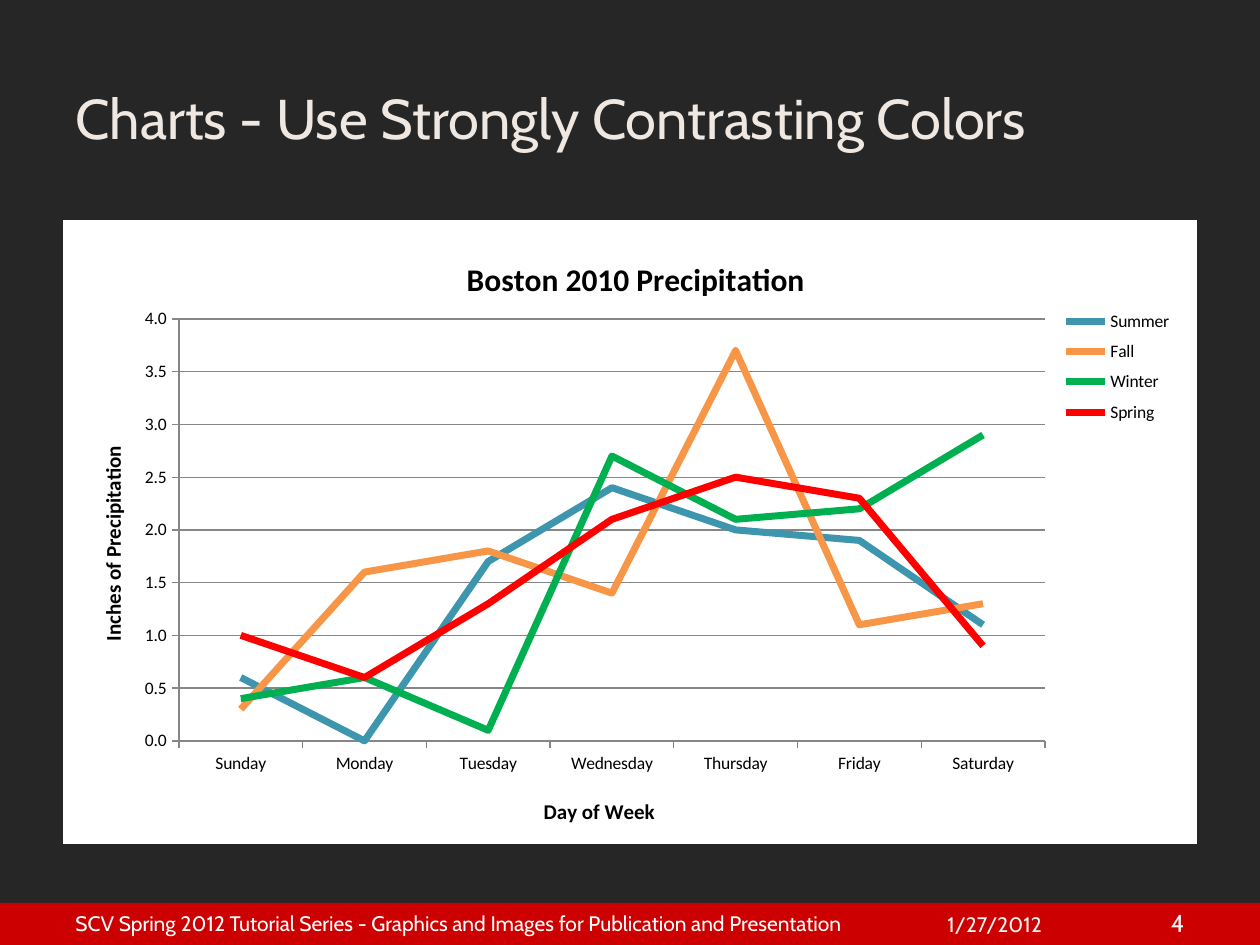
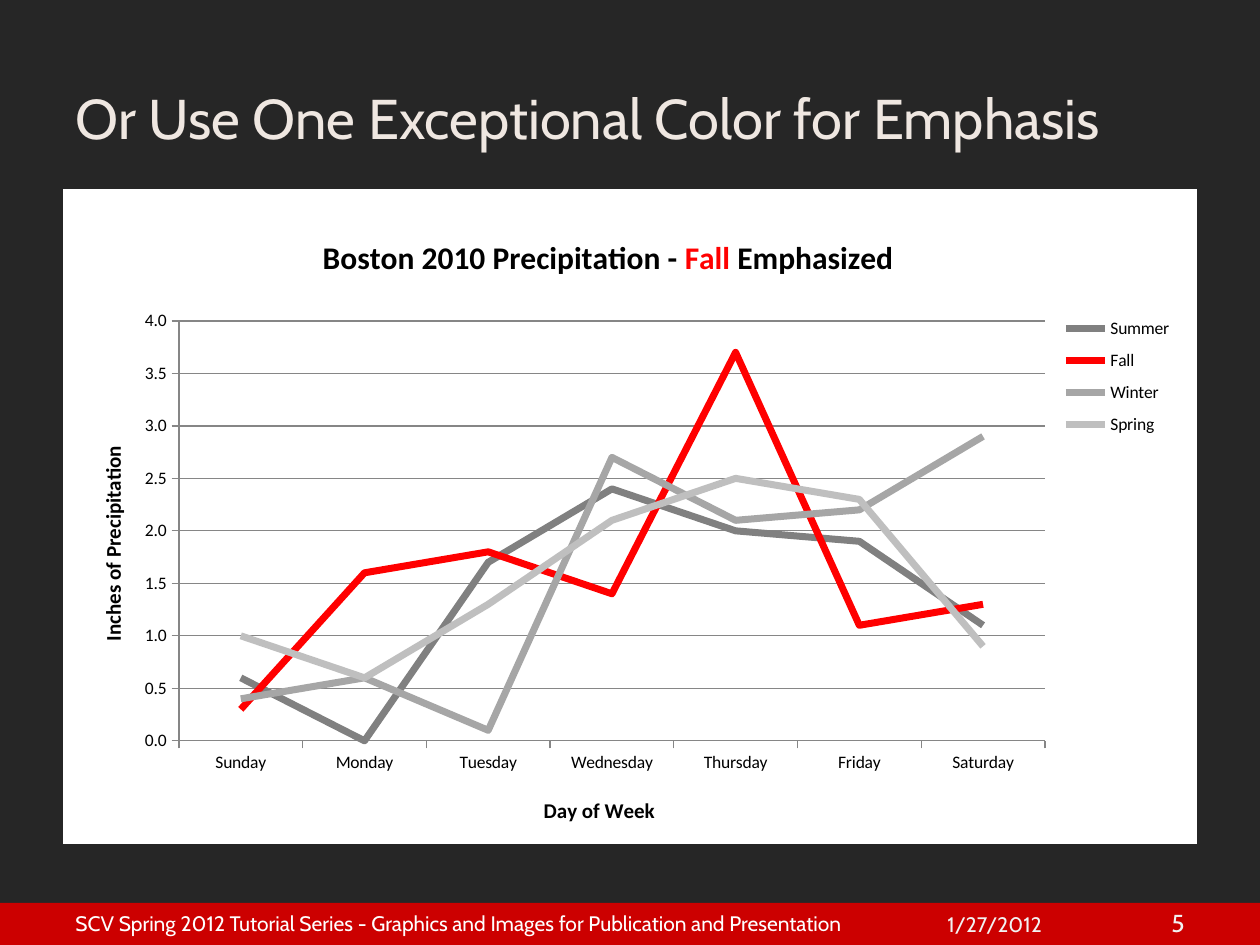
from lxml.etree import SubElement
from pptx import Presentation
from pptx.chart.data import CategoryChartData
from pptx.dml.color import RGBColor
from pptx.enum.chart import XL_CHART_TYPE, XL_LEGEND_POSITION, XL_MARKER_STYLE, XL_TICK_MARK
from pptx.enum.shapes import MSO_SHAPE
from pptx.enum.text import MSO_ANCHOR, PP_ALIGN
from pptx.oxml import parse_xml
from pptx.oxml.ns import nsdecls, qn
from pptx.util import Pt

EMU_PER_PX = 914400 / 126
SLIDE_WIDTH, SLIDE_HEIGHT = 1260, 945
BAND_TOP = 903
CHART_LEFT, CHART_WIDTH, CHART_BOTTOM = 63, 1134, 844

COLORS = {
    "background": "262626",
    "band": "CC0000",
    "title": "EFE7E1",
    "footer": "FFFFFF",
    "footer_detail": "F2F2F2",
    "panel": "FFFFFF",
    "text": "000000",
    "grid": "868686",
    "blue": "3D96AE",
    "orange": "F79646",
    "green": "00B050",
    "red": "FF0000",
    "dark_gray": "808080",
    "mid_gray": "A6A6A6",
    "light_gray": "BFBFBF",
}
SLIDE_FONT = "Cabin"
CHART_FONT = "Calibri"

FOOTER = "SCV Spring 2012 Tutorial Series - Graphics and Images for Publication and Presentation"
DATE = "1/27/2012"

DAYS = ["Sunday", "Monday", "Tuesday", "Wednesday", "Thursday", "Friday", "Saturday"]
PRECIPITATION = {
    "Summer": [0.6, 0, 1.7, 2.4, 2, 1.9, 1.1],
    "Fall": [0.3, 1.6, 1.8, 1.4, 3.7, 1.1, 1.3],
    "Winter": [0.4, 0.6, 0.1, 2.7, 2.1, 2.2, 2.9],
    "Spring": [1, 0.6, 1.3, 2.1, 2.5, 2.3, 0.9],
}

SLIDES = [
    {
        "title": "Charts - Use Strongly Contrasting Colors",
        "number": "4",
        "top": 220,
        "chart_title": [("Boston 2010 Precipitation", "text")],
        "chart_title_at": (461, 252),
        "plot_at": (179, 319, 866, 422),
        "legend_at": (1055, 301, 125, 132),
        "line_colors": ["blue", "orange", "green", "red"],
    },
    {
        "title": "Or Use One Exceptional Color for Emphasis",
        "number": "5",
        "top": 189,
        "chart_title": [
            ("Boston 2010 Precipitation - ", "text"),
            ("Fall", "red"),
            (" Emphasized", "text"),
        ],
        "chart_title_at": (319, 233),
        "plot_at": (179, 321, 866, 420),
        "legend_at": (1055, 307, 125, 139),
        "line_colors": ["dark_gray", "red", "mid_gray", "light_gray"],
    },
]


def px(length):
    return round(length * EMU_PER_PX)


def rgb(name):
    return RGBColor.from_string(COLORS[name])


def add_text(paragraph, text, size=12, color="text", font=SLIDE_FONT, bold=False):
    run = paragraph.add_run()
    run.text = text
    run.font.size = Pt(size)
    run.font.name = font
    run.font.bold = bold
    run.font.color.rgb = rgb(color)


def add_text_box(slide, box, text, align=PP_ALIGN.LEFT, **text_format):
    shape = slide.shapes.add_textbox(*map(px, box))
    text_frame = shape.text_frame
    text_frame.word_wrap = True
    text_frame.vertical_anchor = MSO_ANCHOR.MIDDLE
    paragraph = text_frame.paragraphs[0]
    paragraph.alignment = align
    add_text(paragraph, text, **text_format)


def add_band(slide):
    shape = slide.shapes.add_shape(
        MSO_SHAPE.RECTANGLE, 0, px(BAND_TOP), px(SLIDE_WIDTH), px(SLIDE_HEIGHT - BAND_TOP)
    )
    shape.shadow.inherit = False
    shape.fill.solid()
    shape.fill.fore_color.rgb = rgb("band")
    shape.line.fill.background()


def add_frame(slide, title, number):
    slide.background.fill.solid()
    slide.background.fill.fore_color.rgb = rgb("background")
    add_band(slide)
    add_text_box(slide, (63, 38, 1134, 158), title, size=32, color="title")
    add_text_box(slide, (935, 903, 136, 42), DATE, color="footer_detail")
    add_text_box(slide, (1102, 901, 95, 44), number, align=PP_ALIGN.RIGHT,
                 size=14, color="footer_detail")
    add_text_box(slide, (63, 901, 840, 44), FOOTER, color="footer")


def place(element, position, chart_top, index=1):
    for layout in element.findall(qn("c:layout")):
        element.remove(layout)
    layout = parse_xml(f"<c:layout {nsdecls('c')}/>")
    element.insert(index, layout)
    manual = SubElement(layout, qn("c:manualLayout"))
    if index == 0:
        SubElement(manual, qn("c:layoutTarget"), val="inner")
    for name in ("xMode", "yMode"):
        SubElement(manual, qn(f"c:{name}"), val="edge")
    left, top, *size = position
    height = CHART_BOTTOM - chart_top
    fractions = [(left - CHART_LEFT) / CHART_WIDTH, (top - chart_top) / height]
    if size:
        fractions += [size[0] / CHART_WIDTH, size[1] / height]
    for name, fraction in zip("xywh", fractions):
        SubElement(manual, qn(f"c:{name}"), val=f"{fraction:.4f}")


def fill_panel(chart):
    panel = parse_xml(
        f"<c:spPr {nsdecls('c', 'a')}><a:solidFill><a:srgbClr val=\"{COLORS['panel']}\"/>"
        "</a:solidFill><a:ln><a:noFill/></a:ln></c:spPr>"
    )
    chart.element.find(qn("c:chart")).addnext(panel)


def style_line(line, color, width):
    line.color.rgb = rgb(color)
    line.width = Pt(width)


def style_axis(axis, title, position, chart_top):
    axis.major_tick_mark = XL_TICK_MARK.OUTSIDE
    axis.minor_tick_mark = XL_TICK_MARK.NONE
    style_line(axis.format.line, "grid", 0.75)
    text_frame = axis.axis_title.text_frame
    add_text(text_frame.paragraphs[0], title, font=CHART_FONT, bold=True)
    place(axis.axis_title.element if hasattr(axis.axis_title, "element")
          else axis.axis_title._element, position, chart_top)


def style_value_axis(axis, chart_top):
    axis.minimum_scale, axis.maximum_scale, axis.major_unit = 0, 4, 0.5
    axis.tick_labels.number_format = "#,##0.0"
    axis.tick_labels.number_format_is_linked = False
    axis.has_major_gridlines = True
    style_line(axis.major_gridlines.format.line, "grid", 0.75)
    style_axis(axis, "Inches of Precipitation", (95, 442), chart_top)
    body = axis.axis_title.text_frame._txBody.find(qn("a:bodyPr"))
    body.set("rot", "-5400000")
    body.set("vert", "horz")


def add_line_chart(slide, top, title, title_at, plot_at, legend_at, line_colors):
    data = CategoryChartData(number_format="0.0")
    data.categories = DAYS
    for season, inches in PRECIPITATION.items():
        data.add_series(season, inches)
    box = (CHART_LEFT, top, CHART_WIDTH, CHART_BOTTOM - top)
    chart = slide.shapes.add_chart(XL_CHART_TYPE.LINE, *map(px, box), data).chart
    chart.font.name = CHART_FONT
    chart.font.size = Pt(10)
    chart.font.color.rgb = rgb("text")
    fill_panel(chart)

    chart.has_title = True
    paragraph = chart.chart_title.text_frame.paragraphs[0]
    for text, color in title:
        add_text(paragraph, text, size=18, color=color, font=CHART_FONT, bold=True)
    chart.has_legend = True
    chart.legend.position = XL_LEGEND_POSITION.RIGHT
    chart.legend.include_in_layout = False

    style_axis(chart.category_axis, "Day of Week", (540, 793), top)
    style_value_axis(chart.value_axis, top)
    contents = chart.element.find(qn("c:chart"))
    place(contents.find(qn("c:title")), title_at, top)
    place(contents.find(qn("c:legend")), legend_at, top)
    place(contents.find(qn("c:plotArea")), plot_at, top, index=0)

    plot = chart.plots[0]
    plot.vary_by_categories = False
    for series, color in zip(plot.series, line_colors):
        series.smooth = False
        series.marker.style = XL_MARKER_STYLE.NONE
        style_line(series.format.line, color, 4)


def main():
    presentation = Presentation()
    presentation.slide_width = px(SLIDE_WIDTH)
    presentation.slide_height = px(SLIDE_HEIGHT)
    for content in SLIDES:
        slide = presentation.slides.add_slide(presentation.slide_layouts[6])
        add_frame(slide, content["title"], content["number"])
        add_line_chart(slide, content["top"], content["chart_title"], content["chart_title_at"],
                       content["plot_at"], content["legend_at"], content["line_colors"])
    presentation.save("out.pptx")


if __name__ == "__main__":
    main()
